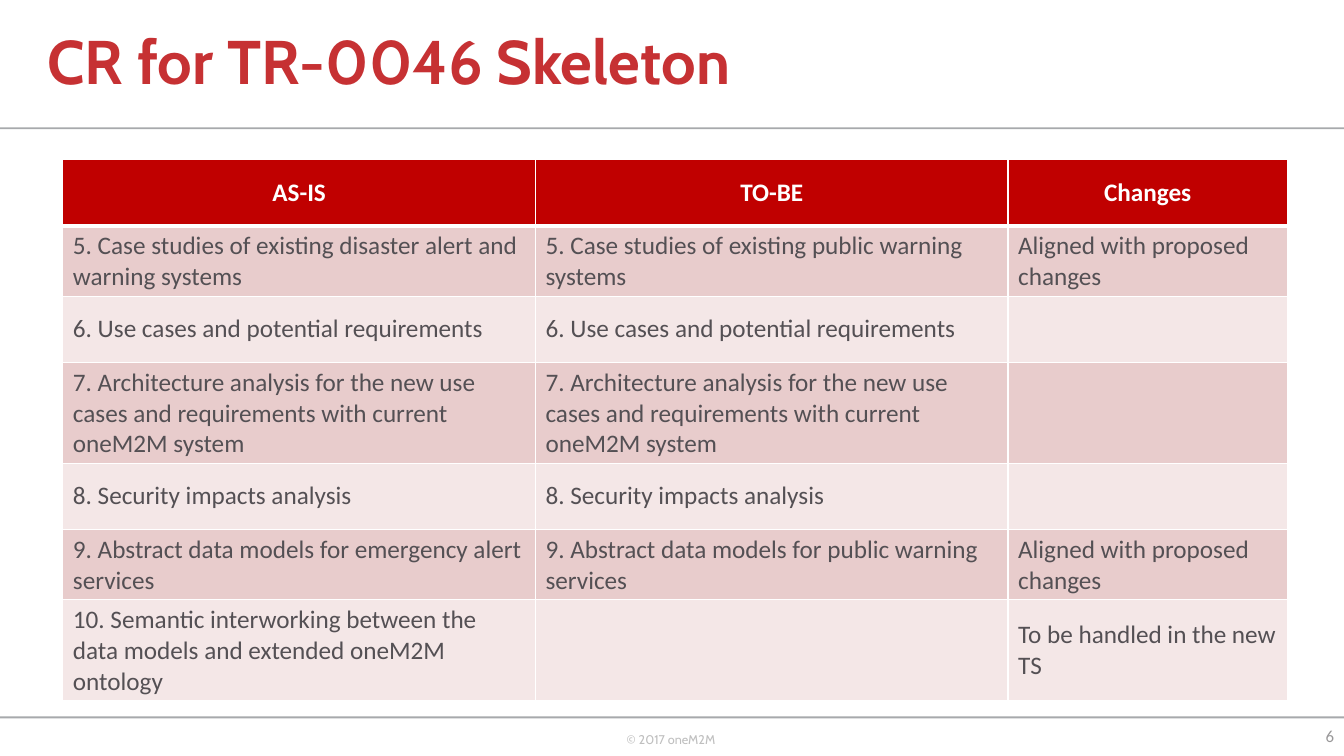
import pptx
import pptx.dml.color
import pptx.enum.shapes
import pptx.enum.text
import pptx.oxml
import pptx.oxml.ns
import pptx.util

Pt = pptx.util.Pt
RGBColor = pptx.dml.color.RGBColor
ALIGN = pptx.enum.text.PP_ALIGN
ANCHOR = pptx.enum.text.MSO_ANCHOR

WHITE = RGBColor(0xFF, 0xFF, 0xFF)
RULE_GRAY = RGBColor(0xA7, 0xA9, 0xAC)
FOOTER_GRAY = RGBColor(0xBF, 0xBF, 0xBF)
NUMBER_GRAY = RGBColor(0x99, 0x98, 0x99)
TITLE_RED = RGBColor(0xC6, 0x31, 0x33)
HEADER_RED = RGBColor(0xC0, 0x00, 0x00)
BODY_GRAY = RGBColor(0x54, 0x50, 0x54)
BAND_DARK = RGBColor(0xE8, 0xCC, 0xCC)
BAND_LIGHT = RGBColor(0xF4, 0xE7, 0xE7)


def write_text(frame, text, font="Calibri", size=18, color=BODY_GRAY, bold=False,
               align=ALIGN.LEFT, anchor=ANCHOR.MIDDLE, wrap=True, line_spacing=None):
    frame.word_wrap = wrap
    frame.vertical_anchor = anchor
    paragraph = frame.paragraphs[0]
    paragraph.alignment = align
    paragraph.line_spacing = line_spacing
    run = paragraph.add_run()
    run.text = text
    run.font.name = font
    run.font.size = Pt(size)
    run.font.bold = bold
    run.font.color.rgb = color


def set_borders(cell, bottom_width):
    properties = cell._tc.get_or_add_tcPr()
    widths = {"lnL": 1, "lnR": 1, "lnT": 1, "lnB": bottom_width}
    for position, (side, width) in enumerate(widths.items()):
        properties.insert(position, pptx.oxml.parse_xml(
            f'<a:{side} {pptx.oxml.ns.nsdecls("a")} w="{Pt(width)}">'
            f'<a:solidFill><a:srgbClr val="{WHITE}"/></a:solidFill></a:{side}>'))


presentation = pptx.Presentation()
presentation.slide_width = Pt(960)
presentation.slide_height = Pt(540)
slide = presentation.slides.add_slide(presentation.slide_layouts[6])

# Rules above and below the content
for top in (90.9, 511.7):
    rule = slide.shapes.add_shape(pptx.enum.shapes.MSO_SHAPE.RECTANGLE,
                                  0, Pt(top), Pt(960), Pt(1.4))
    rule.shadow.inherit = False
    rule.fill.solid()
    rule.fill.fore_color.rgb = RULE_GRAY
    rule.line.fill.background()

# Title, copyright line and slide number
title = slide.shapes.add_textbox(Pt(26.6), 0, Pt(618.5), Pt(92))
write_text(title.text_frame, "CR for TR-0046 Skeleton", font="Cabin", size=44,
           color=TITLE_RED, bold=True, line_spacing=0.9)

footer = slide.shapes.add_textbox(Pt(440.6), Pt(519.1), Pt(79), Pt(28.8))
write_text(footer.text_frame, "© 2017 oneM2M", font="Cabin", size=9,
           color=FOOTER_GRAY, anchor=ANCHOR.TOP, wrap=False)

number = slide.shapes.add_textbox(Pt(921), Pt(511.2), Pt(39), Pt(28.8))
write_text(number.text_frame, "6", size=12, color=NUMBER_GRAY, align=ALIGN.RIGHT)

# Comparison table
ARCHITECTURE = ("7. Architecture analysis for the new use cases and requirements "
                "with current oneM2M system")
rows = [
    ("AS-IS", "TO-BE", "Changes"),
    ("5. Case studies of existing disaster alert and warning systems",
     "5. Case studies of existing public warning systems",
     "Aligned with proposed changes"),
    ("6. Use cases and potential requirements",) * 2 + ("",),
    (ARCHITECTURE, ARCHITECTURE, ""),
    ("8. Security impacts analysis",) * 2 + ("",),
    ("9. Abstract data models for emergency alert services",
     "9. Abstract data models for public warning services",
     "Aligned with proposed changes"),
    ("10. Semantic interworking between the data models and extended oneM2M ontology",
     "", "To be handled in the new TS"),
]
column_widths = (337.6, 337.6, 199.5)
row_height = 47.2

table = slide.shapes.add_table(len(rows), len(column_widths), Pt(44.9), Pt(114),
                               Pt(sum(column_widths)), Pt(row_height * len(rows))).table
for column, width in zip(table.columns, column_widths):
    column.width = Pt(width)

for row_index, texts in enumerate(rows):
    table.rows[row_index].height = Pt(row_height)
    is_header = row_index == 0
    band = BAND_DARK if row_index % 2 else BAND_LIGHT
    for column_index, text in enumerate(texts):
        cell = table.cell(row_index, column_index)
        cell.fill.solid()
        cell.fill.fore_color.rgb = HEADER_RED if is_header else band
        set_borders(cell, bottom_width=3 if is_header else 1)
        cell.vertical_anchor = ANCHOR.MIDDLE
        if text:
            write_text(cell.text_frame, text, bold=is_header,
                       color=WHITE if is_header else BODY_GRAY,
                       align=ALIGN.CENTER if is_header else ALIGN.LEFT)

presentation.save("out.pptx")
